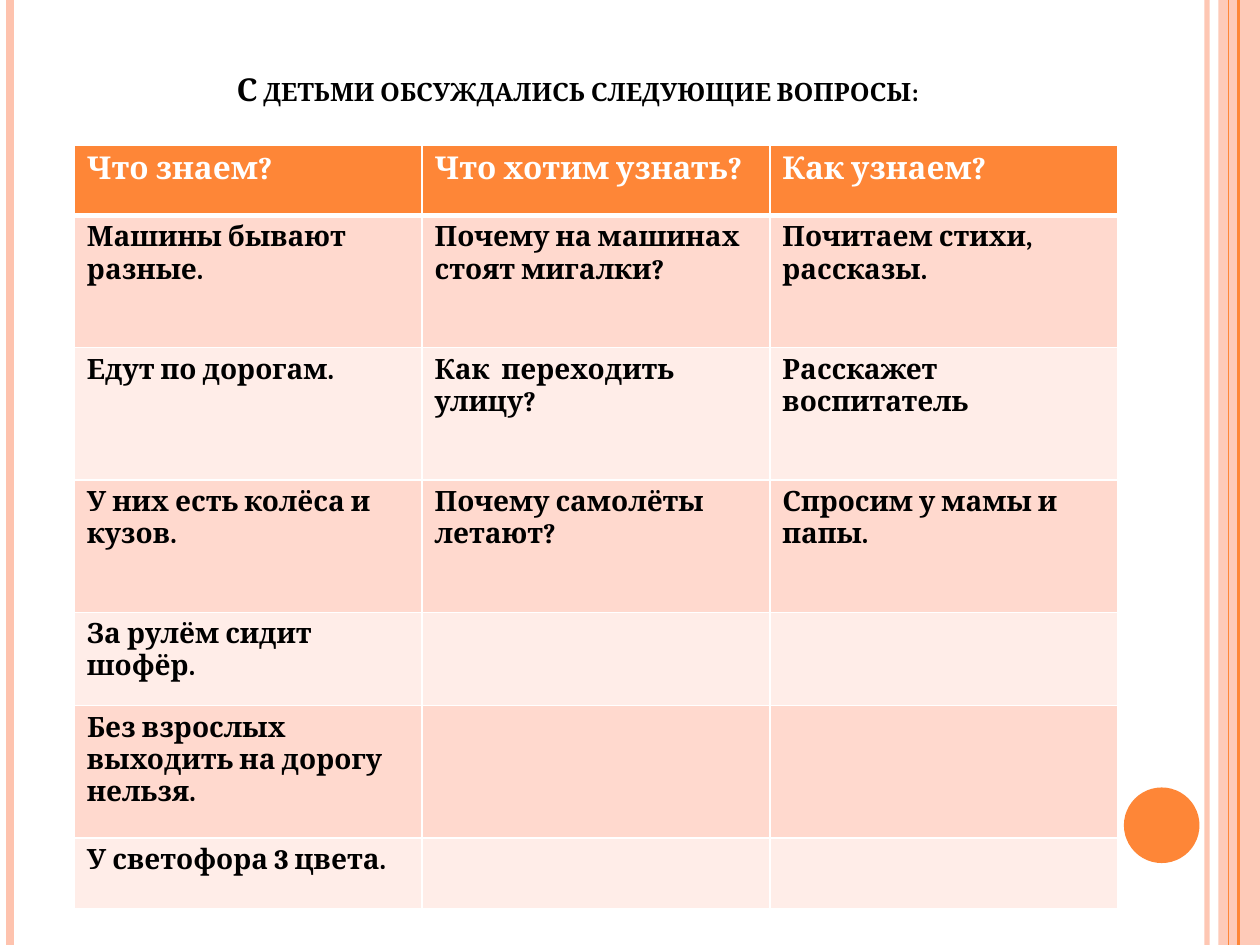
from dataclasses import dataclass

from lxml import etree
from pptx import Presentation
from pptx.dml.color import RGBColor
from pptx.enum.shapes import MSO_CONNECTOR, MSO_SHAPE
from pptx.enum.text import MSO_ANCHOR, PP_ALIGN
from pptx.oxml.ns import qn
from pptx.util import Inches, Pt

STRAIGHT = MSO_CONNECTOR.STRAIGHT
RECTANGLE, OVAL = MSO_SHAPE.RECTANGLE, MSO_SHAPE.OVAL
LEFT, CENTER = PP_ALIGN.LEFT, PP_ALIGN.CENTER
BOTTOM = MSO_ANCHOR.BOTTOM


@dataclass(frozen=True)
class Theme:
    font: str = "Cambria"
    heading: int = 18
    body: int = 16
    text: str = "000000"
    paper: str = "FFFFFF"
    accent: str = "FE8637"
    pale: str = "FEC3AE"
    bands: tuple = ("FFD9CE", "FFEDE8")


THEME = Theme()


def write(frame, text, size=THEME.body, color=THEME.text, align=LEFT, small_caps=False):
    paragraph = frame.paragraphs[0]
    paragraph.alignment = align
    run = paragraph.add_run()
    run.text = text
    run.font.name = THEME.font
    run.font.size = Pt(size)
    run.font.bold = True
    run.font.color.rgb = RGBColor.from_string(color)
    if small_caps:
        run.font._element.set("cap", "small")


def paint(fill, color, opacity=100):
    fill.solid()
    fill.fore_color.rgb = RGBColor.from_string(color)
    if opacity < 100:
        for swatch in fill._xPr.iter(qn("a:srgbClr")):
            etree.SubElement(swatch, qn("a:alpha")).set("val", str(opacity * 1000))


deck = Presentation()
deck.slide_width, deck.slide_height = Inches(10), Inches(7.5)
W, H = deck.slide_width, deck.slide_height
slide = deck.slides.add_slide(deck.slide_layouts[5])
paint(slide.background.fill, THEME.paper)

# Side band, stripes and disc; a stripe is x, width, colour, opacity
band = slide.shapes.add_shape(RECTANGLE, int(W * 0.967), 0, int(W * 0.033), H)
disc = slide.shapes.add_shape(OVAL, int(W * 0.892), Inches(6.25), int(W * 0.06), int(W * 0.06))
for ornament, color, opacity in ((band, THEME.pale, 87), (disc, THEME.accent, 100)):
    ornament.shadow.inherit = False
    ornament.line.fill.background()
    paint(ornament.fill, color, opacity)

for share, weight, color, opacity in (
    (0.958, 3, THEME.pale, 93),
    (0.008, 4.5, THEME.pale, 100),
    (0.983, 1.5, THEME.accent, 100),
    (0.975, 0.75, THEME.accent, 100),
):
    stripe = slide.shapes.add_connector(STRAIGHT, int(W * share), 0, int(W * share), H)
    stripe.line.width = Pt(weight)
    paint(stripe.line.fill, color, opacity)
    etree.SubElement(stripe._element.spPr, qn("a:effectLst"))
    if share == 0.975:  # the thin stripe shows through the band
        band._element.addprevious(stripe._element)
        stripe._element.addprevious(band._element)

# Title
title = slide.shapes.title
title.left, title.top = Inches(0.5), Inches(0.3)
title.width, title.height = Inches(8.17), Inches(0.61)
title.text_frame.vertical_anchor = BOTTOM
title.text_frame.word_wrap = True
write(title.text_frame, "С детьми обсуждались следующие вопросы:",
      size=THEME.heading, align=CENTER, small_caps=True)

# Table of questions
QUESTIONS = (
    ("Что знаем?", "Что хотим узнать?", "Как узнаем?"),
    ("Машины бывают разные.", "Почему на машинах стоят мигалки?", "Почитаем стихи, рассказы."),
    ("Едут по дорогам.", "Как  переходить улицу?", "Расскажет воспитатель"),
    ("У них есть колёса и кузов.", "Почему самолёты летают?", "Спросим у мамы и папы."),
    ("За рулём сидит шофёр.", "", ""),
    ("Без взрослых выходить на дорогу нельзя.", "", ""),
    ("У светофора 3 цвета.", "", ""),
)
ROW_HEIGHTS = (0.56, 1.05, 1.05, 1.05, 0.74, 1.05, 0.56)
COLUMN = 2.76

table = slide.shapes.add_table(
    len(QUESTIONS), 3, Inches(0.59), Inches(1.15),
    Inches(3 * COLUMN), Inches(sum(ROW_HEIGHTS))).table
for column in table.columns:
    column.width = Inches(COLUMN)

for r, (answers, height) in enumerate(zip(QUESTIONS, ROW_HEIGHTS)):
    table.rows[r].height = Inches(height)
    header = r == 0
    for c, answer in enumerate(answers):
        cell = table.cell(r, c)
        paint(cell.fill, THEME.accent if header else THEME.bands[(r - 1) % 2])
        if answer:
            write(cell.text_frame, answer,
                  size=THEME.heading if header else THEME.body,
                  color=THEME.paper if header else THEME.text)
        # White rules, thicker under the header
        rules = {"lnL": 1, "lnR": 1, "lnT": 3 if r == 1 else 1, "lnB": 3 if header else 1}
        properties = cell._tc.get_or_add_tcPr()
        for place, (side, weight) in enumerate(rules.items()):
            rule = etree.Element(qn(f"a:{side}"), w=str(Pt(weight)))
            ink = etree.SubElement(rule, qn("a:solidFill"))
            etree.SubElement(ink, qn("a:srgbClr"), val=THEME.paper)
            properties.insert(place, rule)

deck.save("out.pptx")
